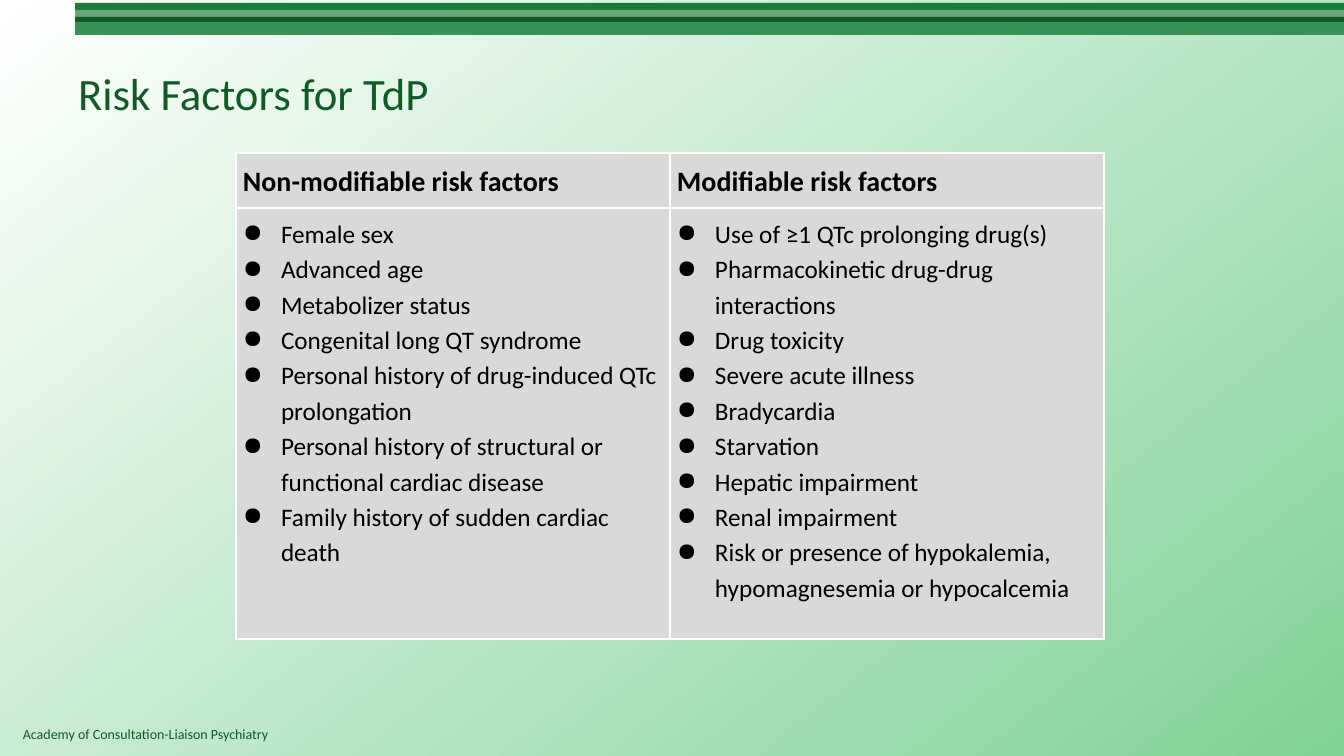
from lxml.etree import SubElement
from pptx import Presentation
from pptx.dml.color import RGBColor
from pptx.enum.shapes import MSO_SHAPE
from pptx.enum.text import MSO_ANCHOR, PP_ALIGN
from pptx.oxml.ns import qn
from pptx.util import Pt

EMU_PER_PX = 914400 / 100.8
SLIDE_WIDTH, SLIDE_HEIGHT = 1344, 756
COLORS = {
    "white": "FFFFFF",
    "background_end": "81D297",
    "dark_green": "105A25",
    "cell": "D9D9D9",
    "black": "000000",
}
# top, height, colour
BARS = [(3, 7, "177D38"), (10, 8, "66A677"), (17, 6, "105A25"), (22, 13, "389155")]
BAR_LEFT = 75
RISK_FACTORS = {
    "Non-modifiable risk factors": [
        "Female sex",
        "Advanced age",
        "Metabolizer status",
        "Congenital long QT syndrome",
        "Personal history of drug-induced QTc prolongation",
        "Personal history of structural or functional cardiac disease",
        "Family history of sudden cardiac death",
    ],
    "Modifiable risk factors": [
        "Use of ≥1 QTc prolonging drug(s)",
        "Pharmacokinetic drug-drug interactions",
        "Drug toxicity",
        "Severe acute illness",
        "Bradycardia",
        "Starvation",
        "Hepatic impairment",
        "Renal impairment",
        "Risk or presence of hypokalemia, hypomagnesemia or hypocalcemia",
    ],
}
COLUMN_WIDTH = 434
ROW_HEIGHTS = [55, 431]
CELL_MARGIN = 7
BULLET_INDENT = 38


def px(length):
    return round(length * EMU_PER_PX)


def set_font(paragraph, size, color, bold=False):
    font = paragraph.font
    font.name = "Calibri"
    font.size = Pt(size)
    font.bold = bold
    font.color.rgb = RGBColor.from_string(COLORS[color])


presentation = Presentation()
presentation.slide_width = px(SLIDE_WIDTH)
presentation.slide_height = px(SLIDE_HEIGHT)
slide = presentation.slides.add_slide(presentation.slide_layouts[5])

# Background
background = slide.background.fill
background.gradient()
background.gradient_angle = 308
for stop, color in zip(background.gradient_stops, ("white", "background_end")):
    stop.color.rgb = RGBColor.from_string(COLORS[color])

# Top bars
for top, height, color in BARS:
    bar = slide.shapes.add_shape(
        MSO_SHAPE.RECTANGLE, px(BAR_LEFT), px(top), px(SLIDE_WIDTH - BAR_LEFT), px(height)
    )
    bar.shadow.inherit = False
    bar.fill.solid()
    bar.fill.fore_color.rgb = RGBColor.from_string(color)
    bar.line.fill.background()

# Title
title = slide.shapes.title
title.left, title.top, title.width, title.height = px(68), px(30), px(1210), px(126)
title.text_frame.text = "Risk Factors for TdP"
title.text_frame.vertical_anchor = MSO_ANCHOR.MIDDLE
title_paragraph = title.text_frame.paragraphs[0]
title_paragraph.alignment = PP_ALIGN.LEFT
set_font(title_paragraph, 32, "dark_green")

# Footer
footer = slide.shapes.add_textbox(px(13), px(721), px(932), px(27))
footer.text_frame.word_wrap = True
footer.text_frame.text = "Academy of Consultation-Liaison Psychiatry"
set_font(footer.text_frame.paragraphs[0], 10, "dark_green")

# Risk factor table
table = slide.shapes.add_table(
    2, 2, px(236), px(153), px(2 * COLUMN_WIDTH), px(sum(ROW_HEIGHTS))
).table
table.first_row = False
table.horz_banding = False
for row, height in zip(table.rows, ROW_HEIGHTS):
    row.height = px(height)

for column, (heading, factors) in enumerate(RISK_FACTORS.items()):
    table.columns[column].width = px(COLUMN_WIDTH)
    for row, lines in enumerate(([heading], factors)):
        is_heading = row == 0
        cell = table.cell(row, column)
        cell.margin_left = cell.margin_right = px(CELL_MARGIN)
        cell.margin_top = cell.margin_bottom = px(CELL_MARGIN)

        cell_properties = cell._tc.get_or_add_tcPr()
        for side in ("a:lnL", "a:lnR", "a:lnT", "a:lnB"):
            border = SubElement(cell_properties, qn(side), w=str(Pt(1)))
            border_fill = SubElement(border, qn("a:solidFill"))
            SubElement(border_fill, qn("a:srgbClr"), val=COLORS["white"])
        cell.fill.solid()
        cell.fill.fore_color.rgb = RGBColor.from_string(COLORS["cell"])

        cell.text_frame.text = "\n".join(lines)
        for paragraph in cell.text_frame.paragraphs:
            paragraph.line_spacing = 1.15
            if not is_heading:
                paragraph_properties = paragraph._p.get_or_add_pPr()
                paragraph_properties.set("marL", str(px(BULLET_INDENT)))
                paragraph_properties.set("indent", str(-px(BULLET_INDENT)))
                SubElement(paragraph_properties, qn("a:buChar"), char="●")
            set_font(paragraph, 20 if is_heading else 18, "black", bold=is_heading)

presentation.save("out.pptx")
